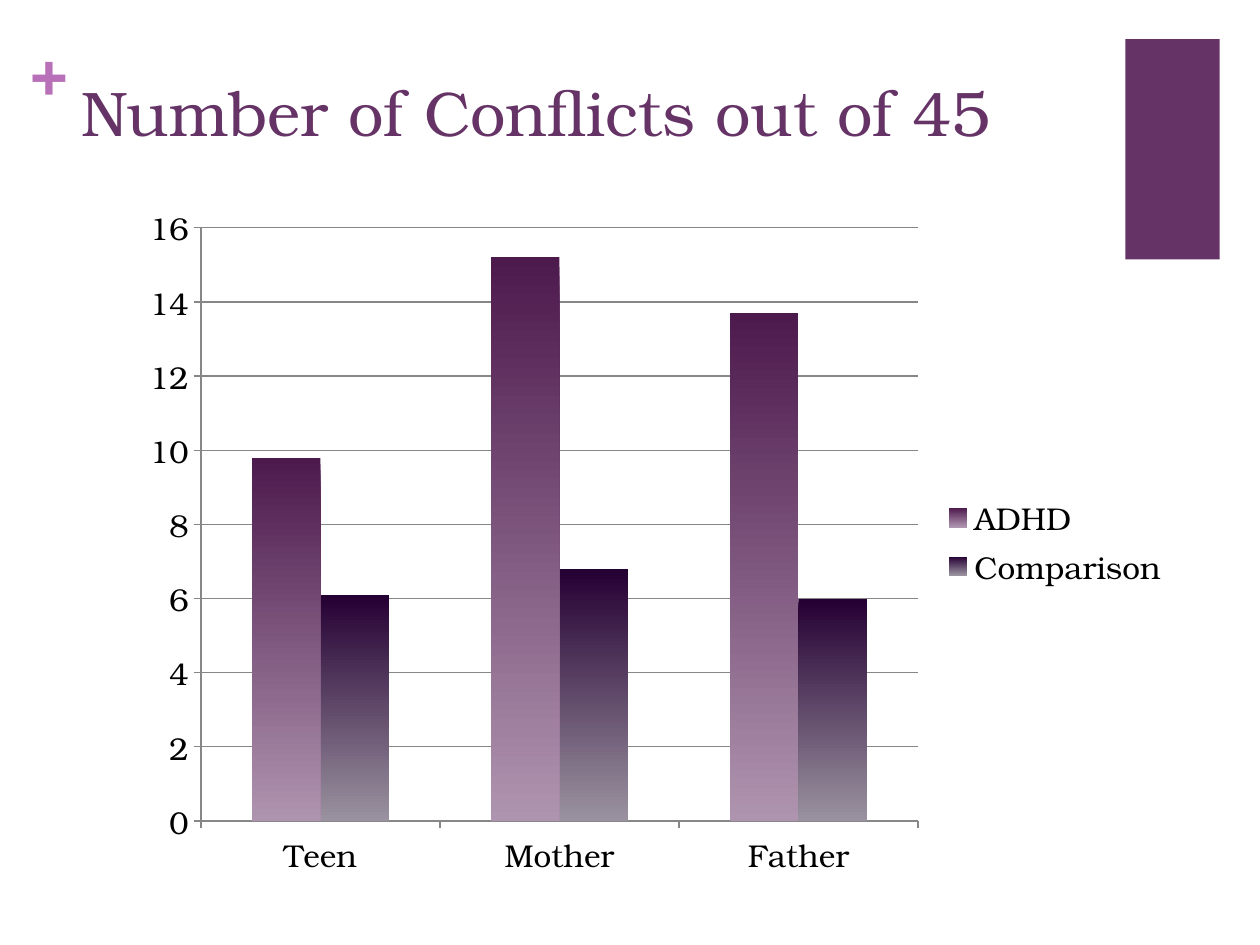
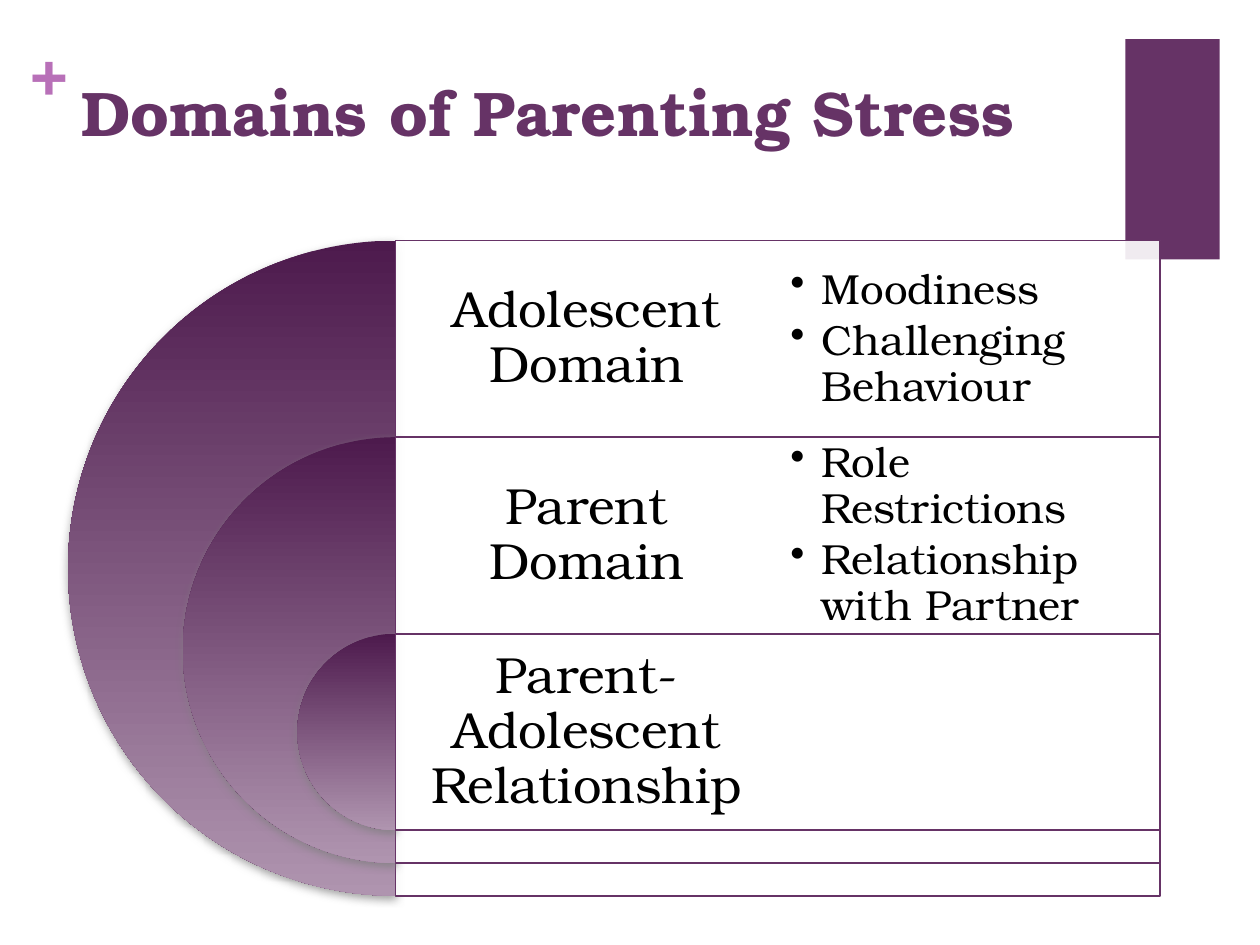
from lxml.etree import SubElement
from pptx import Presentation
from pptx.chart.data import CategoryChartData
from pptx.dml.color import RGBColor
from pptx.enum.chart import XL_CHART_TYPE as ChartType, XL_LEGEND_POSITION as LegendPosition
from pptx.enum.chart import XL_TICK_MARK as TickMark
from pptx.enum.shapes import MSO_SHAPE as Shape
from pptx.enum.text import MSO_ANCHOR as Anchor, PP_ALIGN as Align
from pptx.oxml import parse_xml
from pptx.oxml.ns import nsdecls, qn
from pptx.util import Pt

FONT = "TeX Gyre Bonum"
COLORS = {
    "purple": "663366", "plus": "B870B8", "text": "000000", "panel": "FFFFFF",
    "shadow": "808080", "axis": "878787",
    "plum_dark": "4D1A4D", "plum_light": "AF94AF",
    "ink_dark": "250033", "ink_light": "9A929F",
}
PLUM = ("plum_dark", "plum_light")
INK = ("ink_dark", "ink_light")


def rgb(name):
    return RGBColor.from_string(COLORS[name])


def fill_gradient(fill, names):
    """Shade from the first colour at the top to the second at the bottom."""
    fill.gradient()
    fill.gradient_angle = 270
    for stop, name in zip(fill.gradient_stops, names):
        stop.color.rgb = rgb(name)


def add_shape(slide, kind, box):
    shape = slide.shapes.add_shape(kind, *map(Pt, box))
    shape.shadow.inherit = False
    shape.line.fill.background()
    return shape


def add_text(slide, box, lines, size, color="text", bold=False, inset=(7.2, 3.6),
             anchor=Anchor.TOP, align=Align.LEFT, spacing=None, after=0,
             bullets=False, wrap=True):
    frame = slide.shapes.add_textbox(*map(Pt, box)).text_frame
    frame.word_wrap = wrap
    frame.vertical_anchor = anchor
    frame.margin_left = frame.margin_right = Pt(inset[0])
    frame.margin_top = frame.margin_bottom = Pt(inset[1])
    for index, line in enumerate(lines):
        paragraph = frame.add_paragraph() if index else frame.paragraphs[0]
        paragraph.alignment = align
        paragraph.line_spacing = spacing
        paragraph.space_after = Pt(after)
        if bullets:
            properties = paragraph._p.get_or_add_pPr()
            properties.set("marL", str(Pt(18)))
            properties.set("indent", str(-Pt(18)))
            SubElement(properties, qn("a:buChar"), char="•")
        run = paragraph.add_run()
        run.text = line
        run.font.name, run.font.size, run.font.bold = FONT, Pt(size), bold
        run.font.color.rgb = rgb(color)


def add_base_slide(presentation, title, bold=False):
    """Blank slide with the corner block, the plus sign and the title."""
    slide = presentation.slides.add_slide(presentation.slide_layouts[6])
    block = add_shape(slide, Shape.RECTANGLE, (643, 22.3, 54, 126))
    block.fill.solid()
    block.fill.fore_color.rgb = rgb("purple")
    add_text(slide, (17.3, 18, 20.9, 44), ["+"], 36, "plus", True, inset=(0, 0), wrap=False)
    add_text(slide, (39.6, 38.2, 594.7, 87.8), [title], 36, "purple", bold)
    return slide


def place_plot_area(chart, x, y, width, height):
    """Fix the inner plot area, as fractions of the chart's box."""
    plot_area = chart._chartSpace.chart.plotArea
    for layout in plot_area.findall(qn("c:layout")):
        plot_area.remove(layout)
    values = {"x": x, "y": y, "w": width, "h": height}
    sides = "".join(f'<c:{key} val="{value}"/>' for key, value in values.items())
    plot_area.insert(0, parse_xml(
        f'<c:layout {nsdecls("c")}><c:manualLayout><c:layoutTarget val="inner"/>'
        f'<c:xMode val="edge"/><c:yMode val="edge"/>{sides}</c:manualLayout></c:layout>'))


def add_conflict_chart(slide, box):
    data = CategoryChartData()
    data.categories = ["Teen", "Mother", "Father"]
    data.add_series("ADHD", (9.8, 15.2, 13.7))
    data.add_series("Comparison", (6.1, 6.8, 6))
    chart = slide.shapes.add_chart(ChartType.COLUMN_CLUSTERED, *map(Pt, box), data).chart
    chart.has_title = False
    chart.font.name, chart.font.size = FONT, Pt(18)
    chart.font.color.rgb = rgb("text")
    chart.has_legend = True
    chart.legend.position = LegendPosition.RIGHT
    chart.legend.include_in_layout = False
    place_plot_area(chart, 0.07, 0.05, 0.68, 0.85)

    # Columns
    plot = chart.plots[0]
    plot.vary_by_categories = False
    plot.gap_width, plot.overlap = 150, 0
    for series, names in zip(plot.series, (PLUM, INK)):
        fill_gradient(series.format.fill, names)

    # Axes and gridlines
    value_axis = chart.value_axis
    value_axis.minimum_scale, value_axis.maximum_scale, value_axis.major_unit = 0, 16, 2
    value_axis.has_major_gridlines = True
    for axis in (chart.category_axis, value_axis):
        axis.major_tick_mark = TickMark.OUTSIDE
        axis.minor_tick_mark = TickMark.NONE
    for line in (chart.category_axis.format.line, value_axis.format.line,
                 value_axis.major_gridlines.format.line):
        line.color.rgb = rgb("axis")
        line.width = Pt(0.75)


def add_half_disc(slide, center, top, size):
    disc = add_shape(slide, Shape.PIE, (center - size / 2, top, size, size))
    # Quarter turns down and up, in units of 100000 / 60000 degrees
    disc.adjustments[0], disc.adjustments[1] = 54, 162
    fill_gradient(disc.fill, PLUM)
    effects = disc._element.spPr.find(qn("a:effectLst"))
    effects.append(parse_xml(
        f'<a:outerShdw {nsdecls("a")} blurRad="{Pt(5)}" dist="{Pt(2)}" dir="5400000" '
        f'rotWithShape="0"><a:srgbClr val="{COLORS["shadow"]}"><a:alpha val="75000"/>'
        f'</a:srgbClr></a:outerShdw>'))


def add_panel(slide, box):
    panel = add_shape(slide, Shape.RECTANGLE, box)
    panel.fill.solid()
    panel.fill.fore_color.rgb = rgb("panel")
    color = panel._element.spPr.find(qn("a:solidFill"))[0]
    SubElement(color, qn("a:alpha"), val="90000")
    panel.line.color.rgb = rgb("purple")
    panel.line.width = Pt(1)


def add_domain_target(slide, box, domains):
    """Nested half discs on the left, one row of text per disc on the right."""
    left, top, width, height = box
    center = left + height / 2
    panel_width = left + width - center
    column = panel_width / 2
    row = 0.3 * height
    for index, (name, points) in enumerate(domains):
        row_top = top + index * row
        size = height * (1 - 0.35 * index)
        add_half_disc(slide, center, row_top, size)
        add_panel(slide, (center, row_top, panel_width, size))
        add_text(slide, (center, row_top, column, row), [name], 29, inset=(8.6, 8.6),
                 anchor=Anchor.MIDDLE, align=Align.CENTER, spacing=0.9)
    for index, (name, points) in enumerate(domains):
        if points:
            add_text(slide, (center + column, top + index * row, column, row), points, 24,
                     inset=(7.2, 7.2), anchor=Anchor.MIDDLE, spacing=0.9, after=3.6,
                     bullets=True)


def main():
    presentation = Presentation()
    presentation.slide_width, presentation.slide_height = Pt(720), Pt(540)

    slide = add_base_slide(presentation, "Number of Conflicts out of 45")
    add_conflict_chart(slide, (72.7, 110.2, 602.6, 398.9))

    slide = add_base_slide(presentation, "Domains of Parenting Stress", bold=True)
    add_domain_target(slide, (38.9, 137.5, 624.2, 374.4), [
        ("Adolescent Domain", ["Moodiness", "Challenging Behaviour"]),
        ("Parent Domain", ["Role Restrictions", "Relationship with Partner"]),
        ("Parent-Adolescent Relationship", []),
    ])
    presentation.save("out.pptx")


if __name__ == "__main__":
    main()
